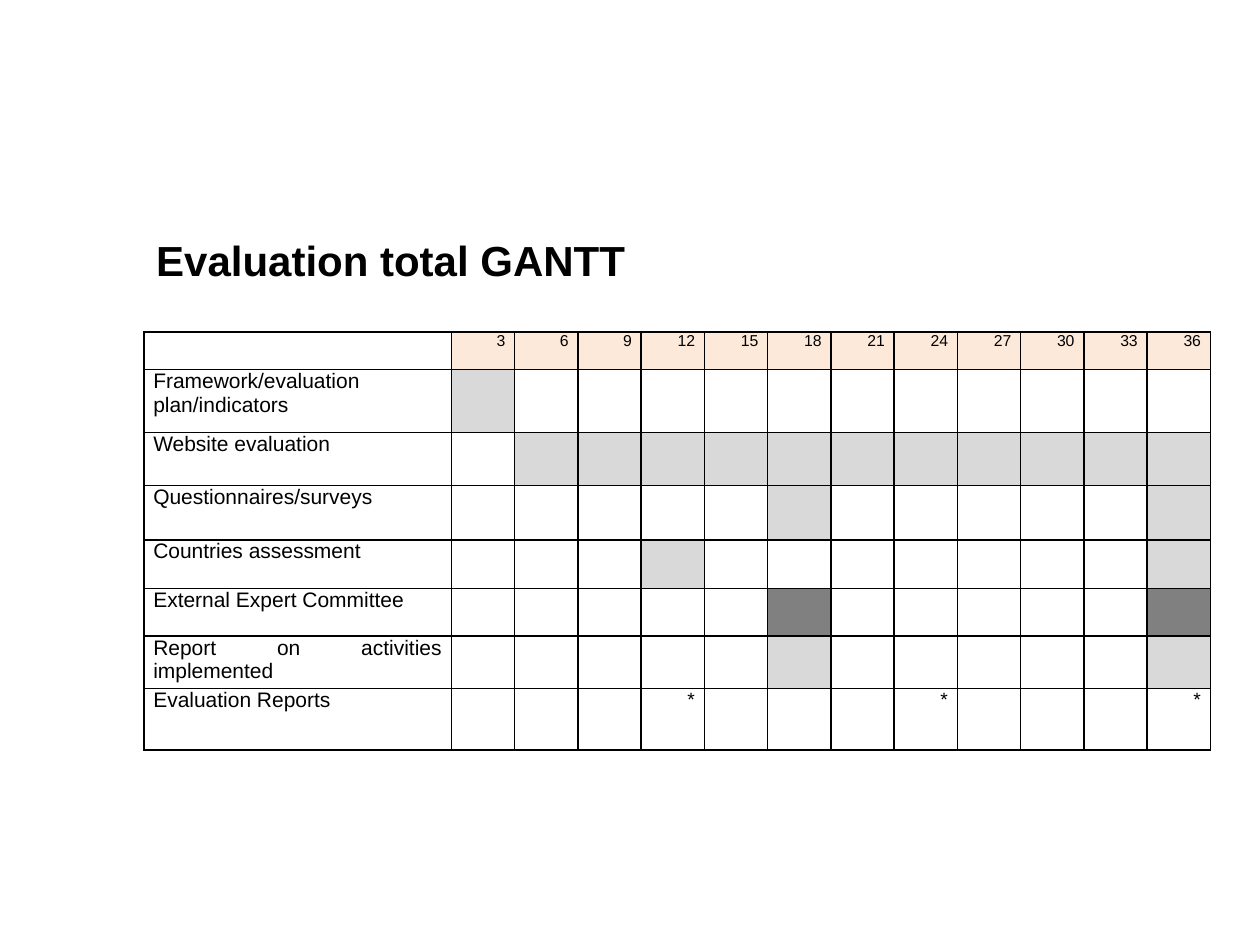
from pptx import Presentation
from pptx.dml.color import RGBColor as Rgb
from pptx.enum.text import MSO_AUTO_SIZE as Fit, PP_ALIGN as Align
from pptx.oxml import parse_xml
from pptx.oxml.ns import nsdecls
from pptx.util import Cm, Pt

HUES = {"ink": "000000", "head": "FDE9D9", "work": "D9D9D9", "panel": "808080"}
MONTHS = list(range(3, 37, 3))
TASKS = [
    ("Framework/evaluation plan/indicators", 1.27, "work", [3]),
    ("Website evaluation", 1.06, "work", MONTHS[1:]),
    ("Questionnaires/surveys", 1.1, "work", [18, 36]),
    ("Countries assessment", 0.98, "work", [12, 36]),
    ("External Expert Committee", 0.96, "panel", [18, 36]),
    ("Report on activities implemented", 1.06, "work", [18, 36]),
    ("Evaluation Reports", 1.24, None, []),
]
REPORTS = [12, 24, 36]


def write(frame, text, size=12, bold=False, align=Align.LEFT):
    para = frame.paragraphs[0]
    para.alignment = align
    run = para.add_run()
    run.text = text
    font = run.font
    font.name, font.size, font.bold = "Arial", Pt(size), bold
    font.color.rgb = Rgb.from_string(HUES["ink"])


class Deck:
    """Holds the style and the current slide."""

    def __init__(self):
        self.show = Presentation()
        self.show.slide_width, self.show.slide_height = Cm(25.4), Cm(19.05)
        self.slide = self.show.slides.add_slide(self.show.slide_layouts[6])

    def title(self, text, x, y, w, h):
        frame = self.slide.shapes.add_textbox(Cm(x), Cm(y), Cm(w), Cm(h)).text_frame
        frame.word_wrap = True
        frame.auto_size = Fit.SHAPE_TO_FIT_TEXT
        write(frame, text, size=24, bold=True)

    def grid(self, x, y, widths, heights):
        shape = self.slide.shapes.add_table(
            len(heights), len(widths), Cm(x), Cm(y), Cm(sum(widths)), Cm(sum(heights)))
        table = shape.table
        table.first_row = table.horz_banding = False
        for col, width in zip(table.columns, widths):
            col.width = Cm(width)
        for row, height in zip(table.rows, heights):
            row.height = Cm(height)
        for cell in table.iter_cells():
            self.frame(cell)
        return table

    def frame(self, cell):
        cell.margin_left = cell.margin_right = Cm(0.19)
        cell.margin_top = cell.margin_bottom = 0
        props = cell._tc.get_or_add_tcPr()
        for side in "LRTB":
            props.append(parse_xml(
                f'<a:ln{side} {nsdecls("a")} w="{Pt(1)}"><a:solidFill>'
                f'<a:srgbClr val="{HUES["ink"]}"/></a:solidFill></a:ln{side}>'))
        cell.fill.background()

    def paint(self, cell, hue):
        cell.fill.solid()
        cell.fill.fore_color.rgb = Rgb.from_string(HUES[hue])


def main():
    deck = Deck()
    deck.title("Evaluation total GANTT", 2.9, 4.6, 17.73, 1.27)
    widths = [6.2] + [15.3 / len(MONTHS)] * len(MONTHS)
    heights = [0.76] + [task[1] for task in TASKS]
    table = deck.grid(2.9, 6.69, widths, heights)
    for col, month in enumerate(MONTHS, 1):
        head = table.cell(0, col)
        deck.paint(head, "head")
        write(head.text_frame, str(month), size=9, align=Align.RIGHT)
        if month in REPORTS:
            last = table.cell(len(TASKS), col)
            write(last.text_frame, "*", size=11, align=Align.RIGHT)
    for row, (name, _, hue, spans) in enumerate(TASKS, 1):
        write(table.cell(row, 0).text_frame, name, align=Align.JUSTIFY)
        for month in spans:
            deck.paint(table.cell(row, MONTHS.index(month) + 1), hue)
    deck.show.save("out.pptx")


if __name__ == "__main__":
    main()
